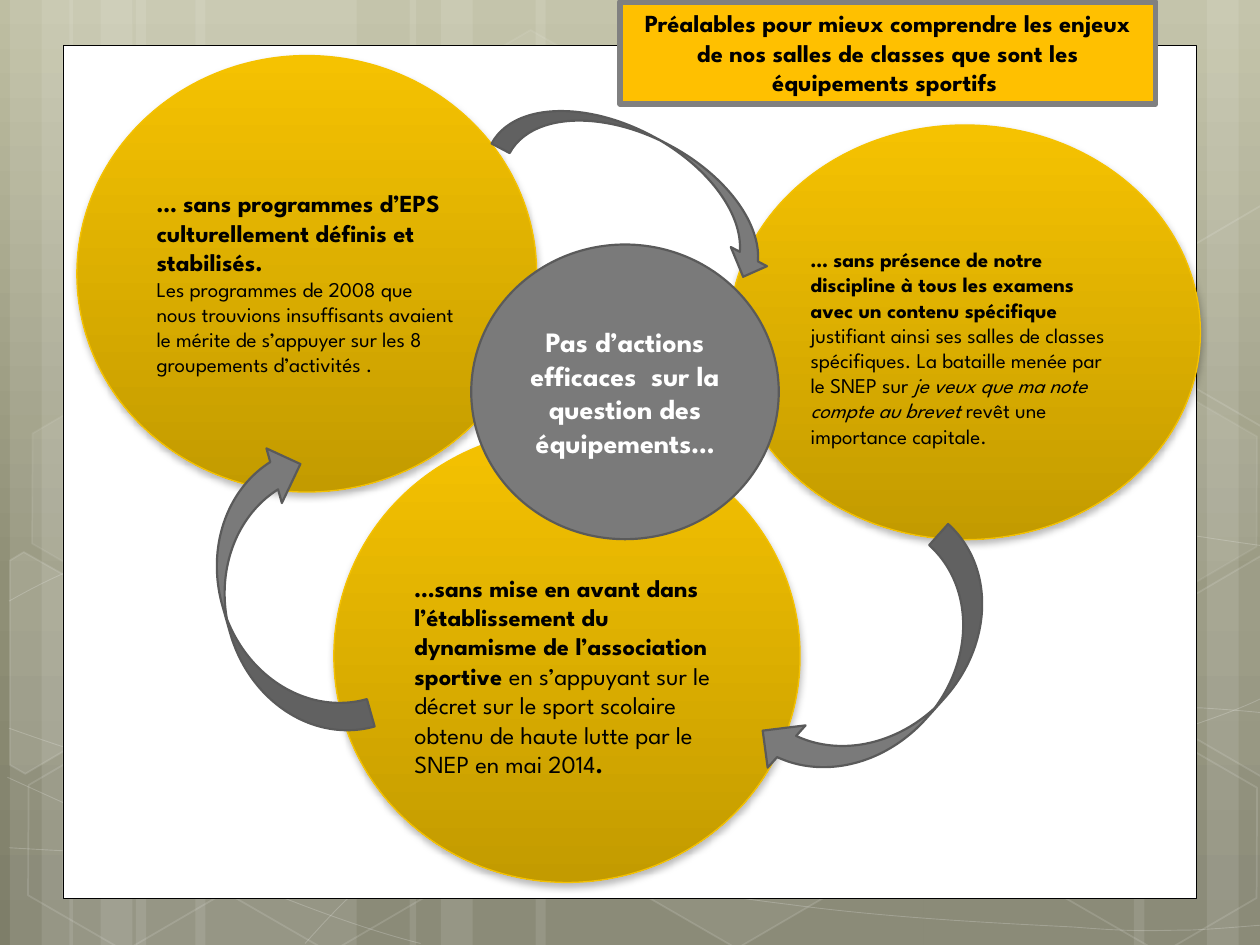
import pptx
import pptx.util
import pptx.dml.color
import pptx.enum.shapes
import pptx.enum.text
import pptx.oxml
import pptx.oxml.ns
import lxml.etree

Cm, Pt = pptx.util.Cm, pptx.util.Pt
MSO = pptx.enum.shapes.MSO_SHAPE
ALIGN = pptx.enum.text.PP_ALIGN
ANCHOR = pptx.enum.text.MSO_ANCHOR
qn = pptx.oxml.ns.qn
FONT = "League Spartan"
GREY, GREY_LINE, GOLD, WHITE, BLACK = "7A7A7A", "5A5A5A", "F5C201", "FFFFFF", "000000"
WIDTH, HEIGHT = 25.4, 19.05
BACKGROUND = [(0, "BEBEA2"), (62, "8F8F76"), (100, "7E7E69")]
GOLD_STOPS = [(0, GOLD), (100, "C39B00")]

STRIPES = [
    (2.74, 4.45), (0.2, 1.27), (0.84, 2.11), (3.94, 4.45), (1.4, 1.27), (2.03, 2.11),
    (18.62, 4.45), (24.33, 1.27), (22.86, 2.11), (10.8, 7.82), (8.26, 1.27), (8.89, 2.11),
]
CURVES = [
    [(0.18, 17.09), (1.55, 17.17), (2.92, 17.25), (4.83, 17.22), (6.73, 17.2), (9.09, 17.15),
     (11.63, 16.89), (14.17, 16.64), (17.78, 16.15), (20.12, 15.67), (22.43, 15.19),
     (24.82, 14.43), (25.58, 14)],
    [(0.18, 12.12), (0.91, 11.71), (1.65, 11.33), (3.07, 10.95), (4.52, 10.57), (6.58, 10.01),
     (8.81, 9.83), (11.07, 9.65), (13.82, 9.63), (16.61, 9.83), (19.41, 10.03),
     (24.05, 10.82), (25.58, 11.02)],
    [(0.15, 15.67), (3.23, 17.07), (6.27, 18.47), (8.48, 19.02)],
    [(0.18, 14.68), (0.97, 14.96), (1.78, 15.24), (3.25, 15.65), (4.72, 16.03), (6.93, 16.66),
     (9.07, 17.09), (11.18, 17.53), (13.84, 17.98), (15.95, 18.24), (18.06, 18.52),
     (20.32, 18.62), (21.67, 18.69), (22.99, 18.8), (23.34, 18.75), (24, 18.75),
     (24.66, 18.72), (25.12, 18.67), (25.58, 18.64)],
    [(6.15, 19.02), (6.6, 18.52), (7.06, 18.01), (7.67, 17.55), (8.28, 17.09), (9.14, 16.59),
     (9.86, 16.23), (10.57, 15.88), (11, 15.72), (11.94, 15.47), (12.85, 15.21),
     (14.55, 14.86), (15.44, 14.68), (16.36, 14.5), (16.48, 14.5), (17.27, 14.45),
     (18.08, 14.38), (19.3, 14.3), (20.17, 14.27), (21.06, 14.25), (22.5, 14.27),
     (22.5, 14.27), (23.07, 14.27), (23.64, 14.27), (24.21, 14.27), (24.66, 14.3),
     (25.1, 14.33), (25.55, 14.38)],
]
HEXAGONS = [
    (8.48, 0.91, 4, 8), (12.62, 14.96, 6, 12), (0.28, 15.01, 0, 12), (0.36, 7.92, 7, 8),
    (4.42, 15.04, 0, 12), (19.13, 11.51, 10, 12), (21.18, 15.06, 0, 12), (21.18, 7.98, 7, 8),
]
CUT_HEXAGONS = [
    (10, [(0.2, 11.3), (0.48, 11.13), (2.44, 12.24), (2.41, 14.48), (0.51, 15.6), (0.2, 15.42)]),
    (4, [(23.52, 12.32), (25.43, 11.2), (25.63, 11.33), (25.63, 15.57), (25.45, 15.67), (23.52, 14.55)]),
    (0, [(23.52, 5.26), (25.43, 4.14), (25.65, 4.27), (25.63, 8.51), (25.45, 8.61), (23.52, 7.49)]),
]
PANELS = [
    ((1.27, 0.91, 22.86, 17.2), WHITE, BLACK, 0.5),
    ((12.67, -0.05, 10.21, 1.93), "F5F5F5", "6F6F4E", 1.25),
    ((12.9, -0.05, 9.73, 1.73), GOLD, None, 0),
]
B, I, N = {"bold": True}, {"italic": True}, {}
CIRCLES = [
    ((1.55, 1.12, 9.27, 8.8), 0.36, [
        (14, [("… sans programmes d’EPS culturellement définis et stabilisés.", B)]),
        (12, [("Les programmes de 2008 que nous trouvions insuffisants avaient le mérite de "
               "s’appuyer sur les 8 groupements d’activités .", N)])]),
    ((6.73, 8.66, 9.4, 9.13), 0.79, [
        (14, [("…sans mise en avant dans l’établissement du dynamisme de l’association sportive ", B),
              ("en s’appuyant sur le décret sur le sport scolaire obtenu de haute lutte par le "
               "SNEP en mai 2014", N), (".", B)])]),
    ((14.7, 2.52, 9.5, 8.36), 0.61, [
        (12, [("… sans présence de notre discipline à tous les examens avec un contenu spécifique ", B),
              ("justifiant ainsi ses salles de classes spécifiques. La bataille menée par le SNEP sur ", N),
              ("je veux que ma note compte au brevet ", I),
              ("revêt une importance capitale.", N)])]),
]
ARROWS = [
    (MSO.CURVED_RIGHT_ARROW, (4.48, 9, 2.29, 6.07), 164.2, True),
    (MSO.CURVED_LEFT_ARROW, (16.76, 10.54, 2.29, 6.17), 41.9, False),
    (MSO.CURVED_DOWN_ARROW, (9.94, 2.78, 6.15, 1.65), 27.9, False),
]
TITLE = "Préalables pour mieux comprendre les enjeux de nos salles de classes que sont les équipements sportifs "
HUB = "Pas d’actions efficaces  sur la question des équipements…"


def rgb(value):
    return pptx.dml.color.RGBColor.from_string(value)


def paint(color_format, value, alpha=100):
    color_format.rgb = rgb(value)
    if alpha < 100:
        clr = color_format._xFill.find(qn("a:srgbClr"))
        lxml.etree.SubElement(clr, qn("a:alpha")).set("val", str(alpha * 1000))


def style(sp, fill=None, line=None, width=0, alpha=100, line_alpha=100):
    sp.shadow.inherit = False
    if fill and alpha:
        sp.fill.solid()
        paint(sp.fill.fore_color, fill, alpha)
    else:
        sp.fill.background()
    if line:
        sp.line.width = Pt(width)
        sp.line.fill.solid()
        paint(sp.line.fill.fore_color, line, line_alpha)
    else:
        sp.line.fill.background()
    return sp


def shape(kind, box, **fmt):
    return style(s.shapes.add_shape(kind, *map(Cm, box)), **fmt)


def freeform(points, closed, **fmt):
    fb = s.shapes.build_freeform(Cm(points[0][0]), Cm(points[0][1]))
    fb.add_line_segments([(Cm(x), Cm(y)) for x, y in points[1:]], close=closed)
    return style(fb.convert_to_shape(), **fmt)


def bend(sp):
    outline = sp._element.find(".//" + qn("a:pathLst"))[0]
    segments = outline.findall(qn("a:lnTo"))
    for k in range(0, len(segments), 3):
        cubic = lxml.etree.SubElement(outline, qn("a:cubicBezTo"))
        for segment in segments[k:k + 3]:
            cubic.append(segment[0])
            outline.remove(segment)


def gradient(fill, element, stops):
    fill.gradient()
    fill.gradient_angle = 270
    gs_list = element.find(".//" + qn("a:gsLst"))
    for gs in list(gs_list):
        gs_list.remove(gs)
    for pos, value in stops:
        gs = lxml.etree.SubElement(gs_list, qn("a:gs"), pos=str(pos * 1000))
        lxml.etree.SubElement(gs, qn("a:srgbClr"), val=value)


def drop_shadow(sp):
    effects = sp._element.spPr.find(qn("a:effectLst"))
    shadow = lxml.etree.SubElement(effects, qn("a:outerShdw"), blurRad=str(Pt(4)), dist=str(Pt(2)), dir="5400000")
    clr = lxml.etree.SubElement(shadow, qn("a:srgbClr"), val=BLACK)
    lxml.etree.SubElement(clr, qn("a:alpha"), val="28000")


def write(sp, paragraphs, color=BLACK, align=ALIGN.LEFT, anchor=ANCHOR.MIDDLE, extra_top=0):
    tf = sp.text_frame
    tf.word_wrap = True
    tf.vertical_anchor = anchor
    tf.margin_left = tf.margin_right = Cm(0.25)
    tf.margin_top, tf.margin_bottom = Cm(0.13 + extra_top), Cm(0.13)
    for n, (size, runs) in enumerate(paragraphs):
        p = tf.add_paragraph() if n else tf.paragraphs[0]
        p.alignment = align
        for text, fmt in runs:
            r = p.add_run()
            r.text = text
            r.font.name, r.font.size = FONT, Pt(size)
            r.font.bold, r.font.italic = fmt.get("bold", False), fmt.get("italic", False)
            r.font.color.rgb = rgb(color)


prs = pptx.Presentation()
prs.slide_width, prs.slide_height = Cm(WIDTH), Cm(HEIGHT)
s = prs.slides.add_slide(prs.slide_layouts[5])
gradient(s.background.fill, s._element, BACKGROUND)

for left, width in STRIPES:
    shape(MSO.RECTANGLE, (left, 0, width, HEIGHT), fill=WHITE, alpha=10)
for points in CURVES:
    bend(freeform(points, False, line=WHITE, width=0.5, line_alpha=20))
for left, top, alpha, line_alpha in HEXAGONS:
    sp = shape(MSO.HEXAGON, (left, top, 4.45, 3.86), fill=WHITE, alpha=alpha, line=WHITE, width=1, line_alpha=line_alpha)
    sp.adjustments[0] = 0.285
    sp.rotation = 30
for alpha, points in CUT_HEXAGONS:
    freeform(points, True, fill=WHITE, alpha=alpha, line=WHITE, width=1, line_alpha=12)
for box, fill, line, width in PANELS:
    shape(MSO.RECTANGLE, box, fill=fill, line=line, width=width)

for box, extra_top, paragraphs in CIRCLES:
    sp = shape(MSO.OVAL, box, line=GOLD, width=0.75)
    gradient(sp.fill, sp._element, GOLD_STOPS)
    drop_shadow(sp)
    write(sp, paragraphs, extra_top=extra_top)
for kind, box, angle, flipped in ARROWS:
    sp = shape(kind, box, fill=GREY, line=GREY_LINE, width=1.25)
    sp.rotation = angle
    if flipped:
        sp._element.spPr.find(qn("a:xfrm")).set("flipH", "1")

title = s.shapes.title
title.left, title.top, title.width, title.height = map(Cm, (12.5, 0.04, 10.8, 2.06))
style(title, fill="FFC000", line="808080", width=3)
write(title, [(14, [(TITLE, B)])], align=ALIGN.CENTER, anchor=ANCHOR.TOP)
title.text_frame.auto_size = pptx.enum.text.MSO_AUTO_SIZE.NONE
s.shapes._spTree.append(title._element)

hub = shape(MSO.OVAL, (9.5, 4.93, 6.2, 5.94), fill=GREY, line=GREY_LINE, width=1.25)
write(hub, [(16, [(HUB, B)])], color=WHITE, align=ALIGN.CENTER)

prs.save("out.pptx")
